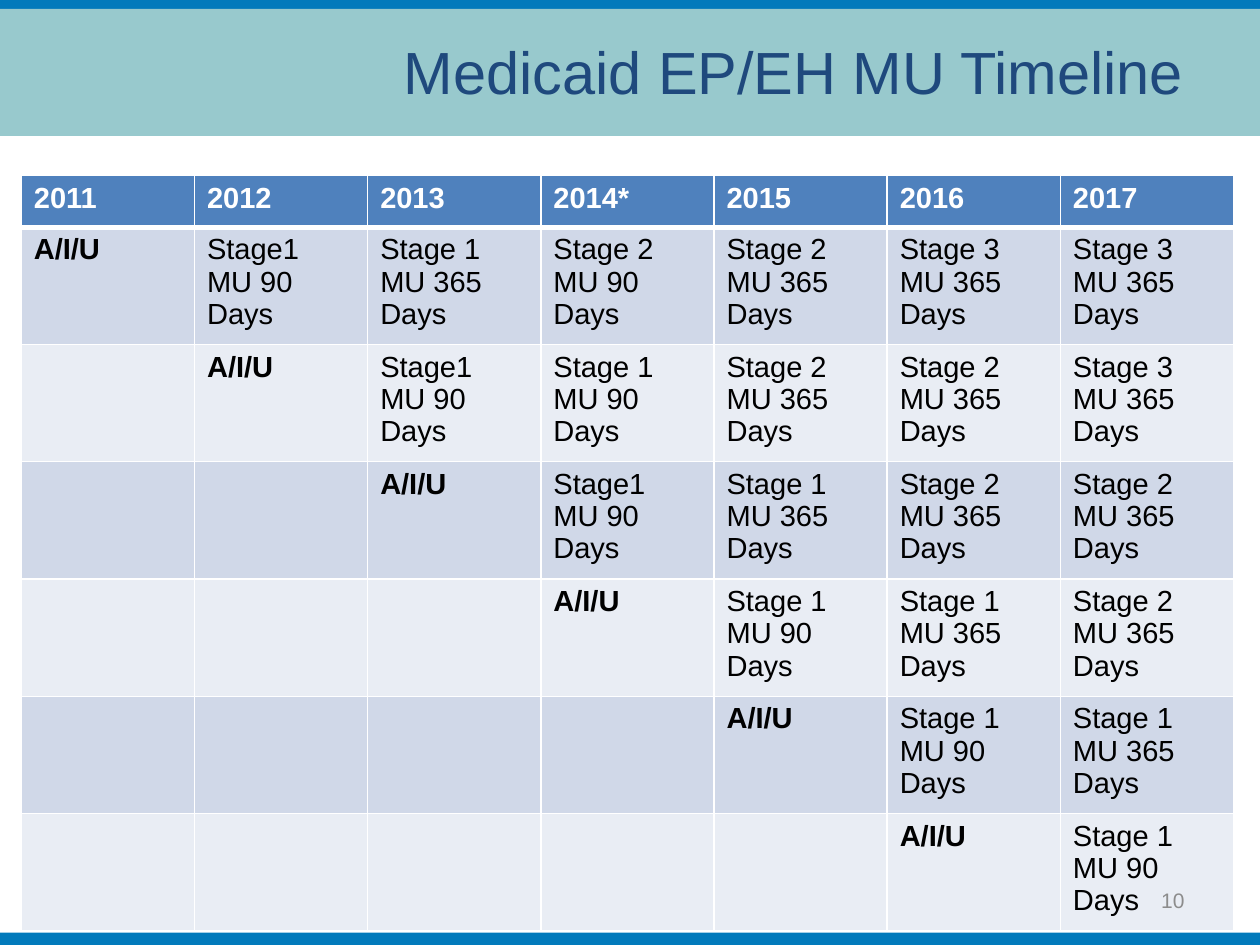
from lxml.etree import SubElement
from pptx import Presentation
from pptx.dml.color import RGBColor
from pptx.enum.shapes import MSO_SHAPE
from pptx.enum.text import MSO_ANCHOR, PP_ALIGN
from pptx.oxml.ns import qn
from pptx.util import Cm, Pt

COLORS = {
    "bar": "027ABB", "band": "98C9CD", "title": "1F497D", "header": "4F81BD",
    "odd_row": "D0D8E8", "even_row": "E9EDF4", "white": "FFFFFF",
    "black": "000000", "page": "8C8C8C",
}
FONT = "Arial"
START = "A/I/U"
YEARS = ["2011", "2012", "2013", "2014*", "2015", "2016", "2017"]
# Each row begins one year later; what follows A/I/U is (stage, days)
TIMELINES = [
    [("Stage1", 90), ("Stage 1", 365), ("Stage 2", 90), ("Stage 2", 365),
     ("Stage 3", 365), ("Stage 3", 365)],
    [("Stage1", 90), ("Stage 1", 90), ("Stage 2", 365), ("Stage 2", 365),
     ("Stage 3", 365)],
    [("Stage1", 90), ("Stage 1", 365), ("Stage 2", 365), ("Stage 2", 365)],
    [("Stage 1", 90), ("Stage 1", 365), ("Stage 2", 365)],
    [("Stage 1", 90), ("Stage 1", 365)],
    [("Stage 1", 90)],
]


def color(name):
    return RGBColor.from_string(COLORS[name])


def style_text(frame, size, color_name, bold=False, align=None):
    for paragraph in frame.paragraphs:
        if align is not None:
            paragraph.alignment = align
        for run in paragraph.runs:
            run.font.name = FONT
            run.font.size = Pt(size)
            run.font.bold = bold
            run.font.color.rgb = color(color_name)


def add_band(slide, left, top, width, height, fill):
    band = slide.shapes.add_shape(MSO_SHAPE.RECTANGLE, left, top, width, height)
    band.shadow.inherit = False
    band.fill.solid()
    band.fill.fore_color.rgb = color(fill)
    band.line.fill.background()


def add_label(slide, box, text, size, color_name, align):
    frame = slide.shapes.add_textbox(*box).text_frame
    frame.word_wrap = True
    frame.vertical_anchor = MSO_ANCHOR.MIDDLE
    frame.text = text
    style_text(frame, size, color_name, align=align)


def add_header(slide, left, top, width, height):
    add_band(slide, left, top, width, Cm(0.64), "bar")
    add_band(slide, left, top + Cm(0.18), width, height - Cm(0.18), "band")
    title_left = left + Cm(6.6)
    title_box = (title_left, top + Cm(0.18), width - title_left, Cm(2.5))
    add_label(slide, title_box, "Medicaid EP/EH MU Timeline", 34, "title",
              PP_ALIGN.CENTER)


def set_borders(cell, bottom_width):
    properties = cell._tc.get_or_add_tcPr()
    widths = {"a:lnL": 1, "a:lnR": 1, "a:lnT": 1, "a:lnB": bottom_width}
    for position, (tag, width) in enumerate(widths.items()):
        line = properties.makeelement(qn(tag), {"w": str(Pt(width))})
        fill = SubElement(line, qn("a:solidFill"))
        SubElement(fill, qn("a:srgbClr"), val=COLORS["white"])
        properties.insert(position, line)


def fill_cell(cell, text, fill, color_name, bold, bottom_width=1):
    cell.fill.solid()
    cell.fill.fore_color.rgb = color(fill)
    set_borders(cell, bottom_width)
    cell.text_frame.text = text
    style_text(cell.text_frame, 16.6, color_name, bold)


def add_timeline(slide, left, top, width, height):
    timeline = slide.shapes.add_table(
        len(TIMELINES) + 1, len(YEARS), left, top, width, height).table
    header_height = Cm(1.04)
    timeline.rows[0].height = header_height
    for row in list(timeline.rows)[1:]:
        row.height = (height - header_height) // len(TIMELINES)

    # Years
    for column, year in enumerate(YEARS):
        fill_cell(timeline.cell(0, column), year, "header", "white", True, 3)

    # Stages, stepping one year to the right in each row
    for offset, stages in enumerate(TIMELINES):
        steps = [f"{stage}\nMU {days} Days" for stage, days in stages]
        texts = [""] * offset + [START] + steps
        fill = "even_row" if offset % 2 else "odd_row"
        for column, text in enumerate(texts):
            fill_cell(timeline.cell(offset + 1, column), text, fill, "black",
                      text == START)


def add_footer(slide, left, top, width, height):
    add_band(slide, left, top, width, height, "bar")
    page_box = (left + Cm(18.2), top - Cm(1.15), Cm(5.93), Cm(1.01))
    add_label(slide, page_box, "10", 12, "page", PP_ALIGN.RIGHT)


def main():
    deck = Presentation()
    deck.slide_width, deck.slide_height = Cm(25.4), Cm(19.05)
    slide = deck.slides.add_slide(deck.slide_layouts[6])
    add_header(slide, 0, 0, deck.slide_width, Cm(2.74))
    add_timeline(slide, Cm(0.43), Cm(3.54), Cm(24.44), Cm(14.66))
    add_footer(slide, 0, Cm(18.8), deck.slide_width, Cm(0.25))
    deck.save("out.pptx")


if __name__ == "__main__":
    main()
